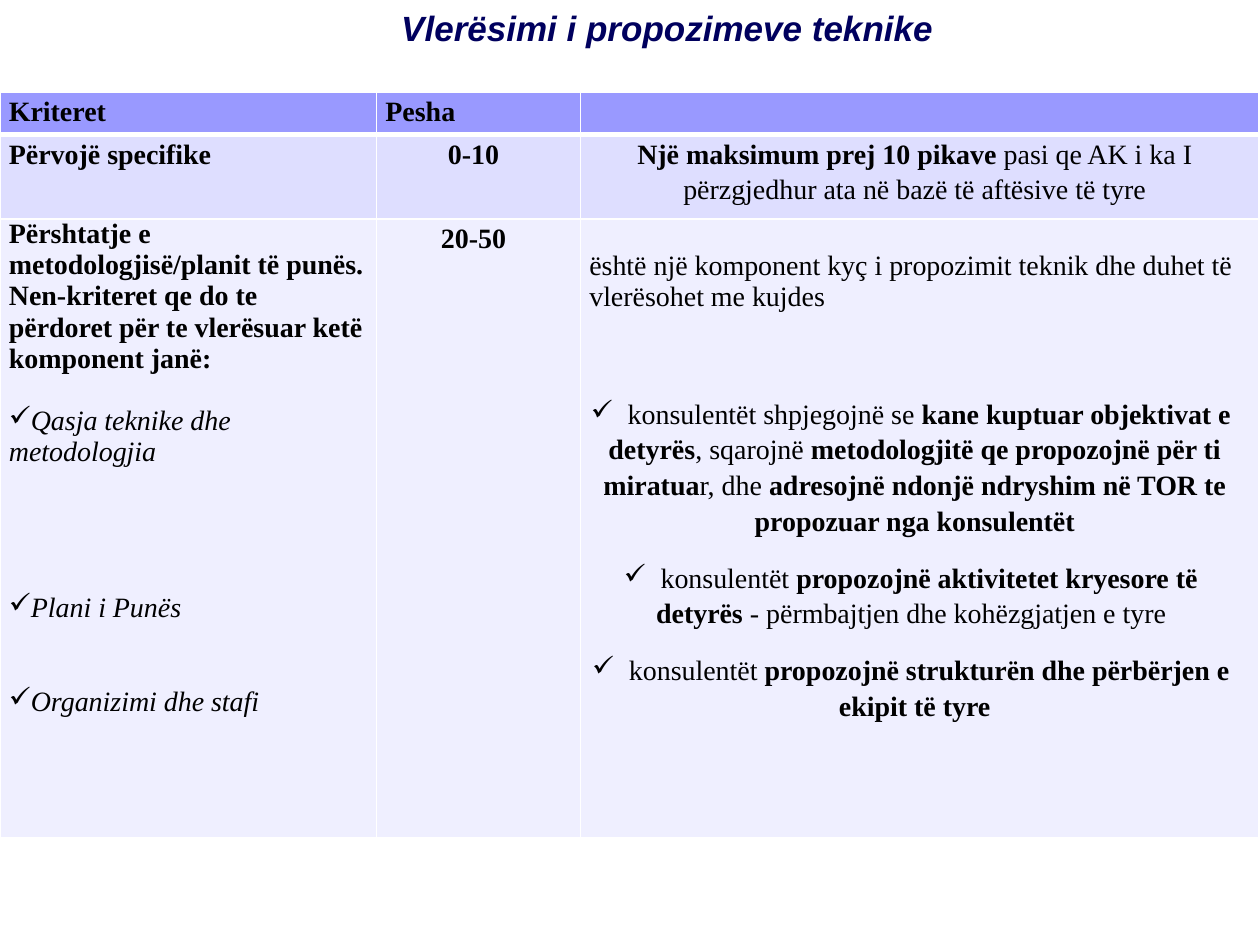
"""Build a slide with the scoring table for technical proposals."""
from dataclasses import dataclass

from lxml import etree
from pptx import Presentation
from pptx import util as u
from pptx.dml.color import RGBColor
from pptx.enum import text
from pptx.oxml import ns

BLACK = RGBColor(0x00, 0x00, 0x00)
WHITE = RGBColor(0xFF, 0xFF, 0xFF)
NAVY = RGBColor(0x00, 0x00, 0x5E)
ROW_FILLS = (RGBColor(0x99, 0x99, 0xFF), RGBColor(0xDE, 0xDE, 0xFF), RGBColor(0xEF, 0xEF, 0xFF))
COLUMN_WIDTHS = (7.59, 4.11, 13.68)
ROW_HEIGHTS = (0.86, 1.7, 12.47)
SIDE_MARGIN = 0.18
CENTERED_RIGHT_MARGIN = 0.38


@dataclass(frozen=True)
class Words:
    content: str
    bold: bool = False
    italic: bool = False


@dataclass(frozen=True)
class Block:
    words: tuple[Words, ...]
    centered: bool = False
    spacing: float | None = None
    before: float = 0
    bullet: bool = False


@dataclass(frozen=True)
class Entry:
    blocks: tuple[Block, ...] = ()
    top_margin: float = 0


def label(content: str, centered: bool = False) -> Entry:
    """Describe a cell with one bold line."""
    return Entry((Block((Words(content, bold=True),), centered, 1.15),))


def criterion(content: str, before: float) -> Block:
    """Describe an italic sub-criterion with a check mark."""
    return Block((Words(content, italic=True),), before=before, bullet=True)


def explanation(*words: Words, before: float = 12) -> Block:
    """Describe a centred explanation with a check mark."""
    return Block(words, True, 1.15, before, True)


CRITERIA = Entry((
    Block((Words("Përshtatje e metodologjisë/planit të punës. Nen-kriteret qe do te "
                 "përdoret për te vlerësuar ketë komponent janë:", bold=True),)),
    criterion("Qasja teknike dhe metodologjia", 18),
    criterion("Plani i Punës", 71),
    criterion("Organizimi dhe stafi", 36),
))
EXPLANATIONS = Entry((
    Block((Words("është një komponent kyç i propozimit teknik dhe duhet të vlerësohet me kujdes"),)),
    explanation(
        Words(" konsulentët shpjegojnë se "),
        Words("kane kuptuar objektivat e detyrës", bold=True),
        Words(", sqarojnë "),
        Words("metodologjitë qe propozojnë për ti miratua", bold=True),
        Words("r, dhe "),
        Words("adresojnë ndonjë ndryshim në TOR te propozuar nga konsulentët", bold=True),
        before=47,
    ),
    explanation(
        Words(" konsulentët "),
        Words("propozojnë aktivitetet kryesore të detyrës ", bold=True),
        Words("- përmbajtjen dhe kohëzgjatjen e tyre "),
    ),
    explanation(
        Words(" konsulentët "),
        Words("propozojnë strukturën dhe përbërjen e ekipit të tyre", bold=True),
    ),
), top_margin=0.63)
MAXIMUM = Entry((Block((
    Words("Një maksimum prej 10 pikave ", bold=True),
    Words("pasi qe AK i ka I përzgjedhur ata në bazë të aftësive të tyre"),
), True, 1.15),))
ROWS = (
    (label("Kriteret"), label("Pesha"), Entry()),
    (label("Përvojë specifike"), label("0-10", True), MAXIMUM),
    (CRITERIA, label("20-50", True), EXPLANATIONS),
)


def add_words(paragraph, words: Words, size: float, font_name: str, color: RGBColor) -> None:
    """Add one formatted run to a paragraph."""
    run = paragraph.add_run()
    run.text = words.content
    font = run.font
    font.name, font.size = font_name, u.Pt(size)
    font.bold, font.italic = words.bold, words.italic
    font.color.rgb = color


def fill_paragraph(paragraph, block: Block) -> None:
    """Write a block of table text into a paragraph."""
    if block.spacing:
        paragraph.line_spacing = block.spacing
    if block.before:
        paragraph.space_before = u.Pt(block.before)
    if block.centered:
        paragraph.alignment = text.PP_ALIGN.CENTER
    if block.bullet:
        properties = paragraph._p.get_or_add_pPr()
        etree.SubElement(properties, ns.qn("a:buChar"), char="✓")
    for words in block.words:
        add_words(paragraph, words, 16, "Times New Roman", BLACK)


def set_borders(cell, bottom_width: float) -> None:
    """Draw white borders around a cell."""
    properties = cell._tc.get_or_add_tcPr()
    widths = {"lnL": 1, "lnR": 1, "lnT": 1, "lnB": bottom_width}
    for position, (side, width) in enumerate(widths.items()):
        line = etree.Element(ns.qn(f"a:{side}"), w=str(u.Pt(width)))
        fill = etree.SubElement(line, ns.qn("a:solidFill"))
        etree.SubElement(fill, ns.qn("a:srgbClr"), val=str(WHITE))
        properties.insert(position, line)


def fill_cell(cell, entry: Entry, color: RGBColor, bottom_width: float) -> None:
    """Format a cell and write its entry."""
    centered = any(block.centered for block in entry.blocks)
    cell.margin_left = u.Cm(SIDE_MARGIN)
    cell.margin_right = u.Cm(CENTERED_RIGHT_MARGIN if centered else SIDE_MARGIN)
    cell.margin_top, cell.margin_bottom = u.Cm(entry.top_margin), u.Cm(0)
    cell.fill.solid()
    cell.fill.fore_color.rgb = color
    set_borders(cell, bottom_width)
    for index, block in enumerate(entry.blocks):
        frame = cell.text_frame
        fill_paragraph(frame.add_paragraph() if index else frame.paragraphs[0], block)


def add_title(slide) -> None:
    """Add the slide heading."""
    shape = slide.shapes.add_textbox(u.Cm(1.7), u.Cm(0), u.Cm(22.43), u.Cm(1.85))
    shape.text_frame.word_wrap = True
    paragraph = shape.text_frame.paragraphs[0]
    paragraph.level = 1
    paragraph.alignment = text.PP_ALIGN.CENTER
    add_words(paragraph, Words("Vlerësimi i propozimeve teknike ", True, True), 20, "Arial", NAVY)


def add_scoring_table(slide) -> None:
    """Add the table of criteria, weights and explanations."""
    table = slide.shapes.add_table(
        len(ROW_HEIGHTS), len(COLUMN_WIDTHS), u.Cm(0), u.Cm(1.85),
        u.Cm(sum(COLUMN_WIDTHS)), u.Cm(sum(ROW_HEIGHTS)),
    ).table
    table.horz_banding = False
    for column, width in zip(table.columns, COLUMN_WIDTHS):
        column.width = u.Cm(width)
    for index, (row, height) in enumerate(zip(table.rows, ROW_HEIGHTS)):
        row.height = u.Cm(height)
        for cell, entry in zip(row.cells, ROWS[index]):
            fill_cell(cell, entry, ROW_FILLS[index], 1 if index else 3)


def main() -> None:
    """Build and save the presentation."""
    presentation = Presentation()
    presentation.slide_width, presentation.slide_height = u.Cm(25.4), u.Cm(19.05)
    slide = presentation.slides.add_slide(presentation.slide_layouts[6])
    add_scoring_table(slide)
    add_title(slide)
    presentation.save("out.pptx")


if __name__ == "__main__":
    main()
